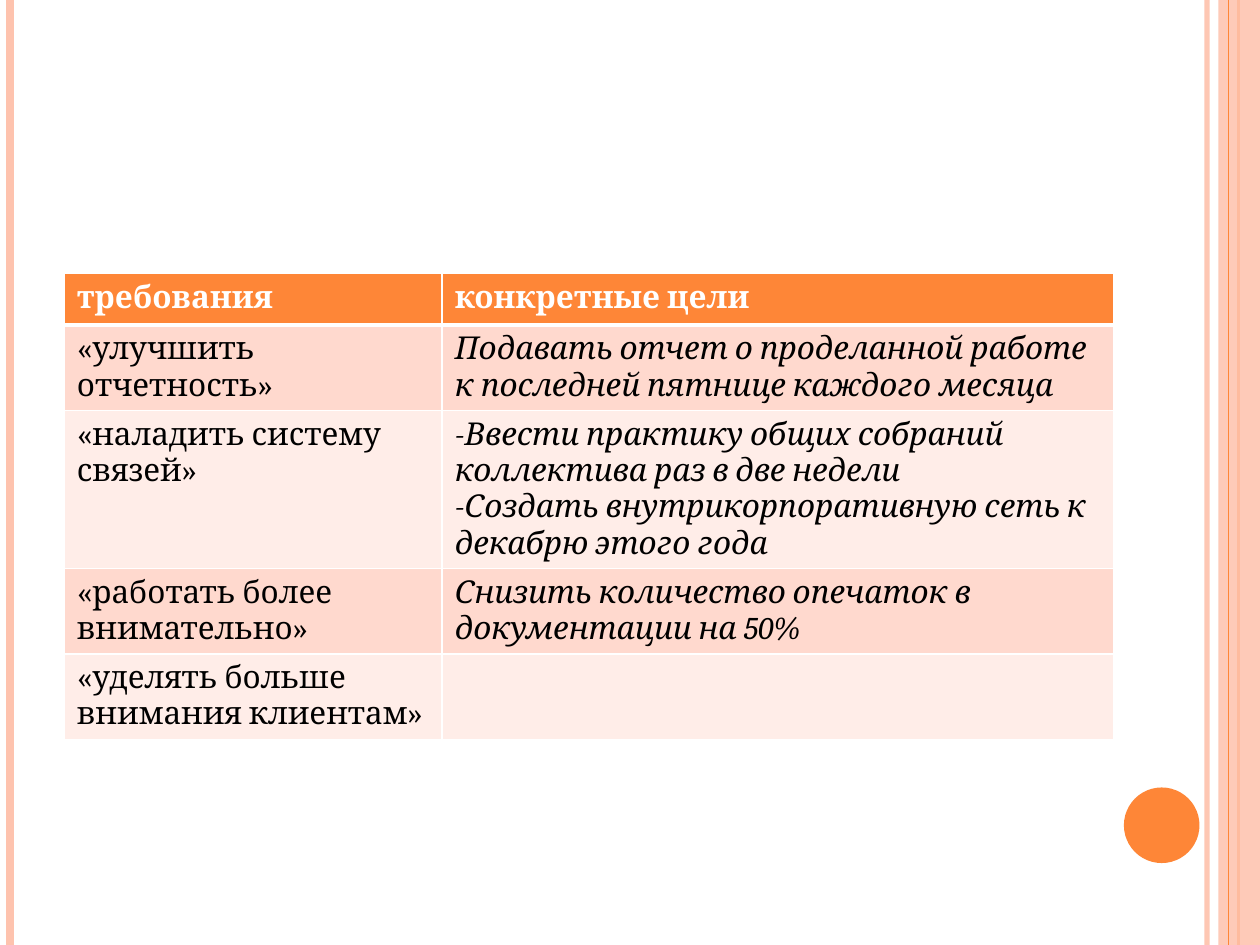
from dataclasses import dataclass

from lxml.etree import SubElement
from pptx import Presentation
from pptx.dml.color import RGBColor
from pptx.enum.shapes import MSO_CONNECTOR, MSO_SHAPE
from pptx.oxml.ns import qn
from pptx.util import Inches, Pt

WIDTH, HEIGHT = Inches(10), Inches(7.5)
ORANGE = RGBColor(0xFE, 0x86, 0x37)
PEACH = RGBColor(0xFE, 0xC3, 0xAE)
BAND_DARK = RGBColor(0xFF, 0xD9, 0xCE)
BAND_LIGHT = RGBColor(0xFF, 0xED, 0xE8)
WHITE = RGBColor(0xFF, 0xFF, 0xFF)
BLACK = RGBColor(0, 0, 0)
FONT = "Cambria"


@dataclass(frozen=True)
class Stripe:
    x: float  # share of the slide width
    color: RGBColor
    weight: float
    opacity: int = 100


@dataclass(frozen=True)
class Goal:
    demand: str
    targets: tuple[str, ...] = ()


STRIPES_BELOW = (
    Stripe(0.958, PEACH, 3, 93),
    Stripe(0.008, PEACH, 4.5),
    Stripe(0.983, ORANGE, 1.5),
)
STRIPE_ABOVE = Stripe(0.975, ORANGE, 0.75)

HEADINGS = ("требования", "конкретные цели")
GOALS = (
    Goal("«улучшить отчетность»",
         ("Подавать отчет о проделанной работе к последней пятнице каждого месяца",)),
    Goal("«наладить систему связей»",
         ("-Ввести практику общих собраний коллектива раз в две недели",
          "-Создать внутрикорпоративную сеть к декабрю этого года")),
    Goal("«работать более внимательно»",
         ("Снизить количество опечаток в документации на 50%",)),
    Goal("«уделять больше внимания клиентам»"),
)
COLUMN_WIDTHS = (3, 5.33)
ROW_HEIGHT = 0.41


def set_opacity(properties, percent: int) -> None:
    color = next(properties.iter(qn("a:srgbClr")))
    SubElement(color, qn("a:alpha"), val=str(percent * 1000))


def draw_stripe(slide, stripe: Stripe) -> None:
    x = int(WIDTH * stripe.x)
    line = slide.shapes.add_connector(MSO_CONNECTOR.STRAIGHT, x, 0, x, HEIGHT)
    line.line.color.rgb = stripe.color
    line.line.width = Pt(stripe.weight)
    properties = line._element.spPr
    if stripe.opacity < 100:
        set_opacity(properties, stripe.opacity)
    SubElement(properties, qn("a:effectLst"))


def draw_shape(slide, kind, left: float, top: float, width: float, height: float,
               color: RGBColor):
    shape = slide.shapes.add_shape(
        kind, Inches(left), Inches(top), Inches(width), Inches(height))
    shape.shadow.inherit = False
    shape.fill.solid()
    shape.fill.fore_color.rgb = color
    shape.line.fill.background()
    return shape


def write_text(text_frame, text: str, *, color: RGBColor = BLACK,
               bold: bool = False, italic: bool = False) -> None:
    """Write one paragraph for each line of the text."""
    for index, content in enumerate(text.split("\n")):
        paragraph = text_frame.add_paragraph() if index else text_frame.paragraphs[0]
        font = paragraph.font
        if content:
            run = paragraph.add_run()
            run.text = content
            font = run.font
        font.name, font.size = FONT, Pt(18)
        font.bold, font.italic = bold, italic
        font.color.rgb = color


def format_cell(cell, fill: RGBColor, top: float = 1, bottom: float = 1) -> None:
    properties = cell._tc.get_or_add_tcPr()
    for side, weight in (("L", 1), ("R", 1), ("T", top), ("B", bottom)):
        border = SubElement(properties, qn(f"a:ln{side}"), w=str(Pt(weight)))
        paint = SubElement(border, qn("a:solidFill"))
        SubElement(paint, qn("a:srgbClr"), val=str(WHITE))
    cell.fill.solid()
    cell.fill.fore_color.rgb = fill


def draw_table(slide) -> None:
    row_count = len(GOALS) + 1
    table = slide.shapes.add_table(
        row_count, len(HEADINGS), Inches(0.51), Inches(2.17),
        Inches(sum(COLUMN_WIDTHS)), Inches(ROW_HEIGHT * row_count)).table
    for column, width in zip(table.columns, COLUMN_WIDTHS):
        column.width = Inches(width)

    # Heading row
    for cell, heading in zip(table.rows[0].cells, HEADINGS):
        write_text(cell.text_frame, heading, color=WHITE, bold=True)
        format_cell(cell, ORANGE, bottom=3)

    # Banded rows
    for number, goal in enumerate(GOALS, start=1):
        demand, targets = table.rows[number].cells
        write_text(demand.text_frame, goal.demand)
        write_text(targets.text_frame, "\n".join(goal.targets), italic=True)
        for cell in (demand, targets):
            format_cell(cell, BAND_DARK if number % 2 else BAND_LIGHT,
                        top=3 if number == 1 else 1)


def main() -> None:
    presentation = Presentation()
    presentation.slide_width, presentation.slide_height = WIDTH, HEIGHT
    slide = presentation.slides.add_slide(presentation.slide_layouts[6])

    # Edge decoration
    for stripe in STRIPES_BELOW:
        draw_stripe(slide, stripe)
    band = draw_shape(slide, MSO_SHAPE.RECTANGLE, 9.67, 0, 0.33, 7.5, PEACH)
    set_opacity(band._element.spPr, 87)
    draw_stripe(slide, STRIPE_ABOVE)
    draw_shape(slide, MSO_SHAPE.OVAL, 8.92, 6.25, 0.6, 0.6, ORANGE)

    draw_table(slide)
    presentation.save("out.pptx")


if __name__ == "__main__":
    main()
